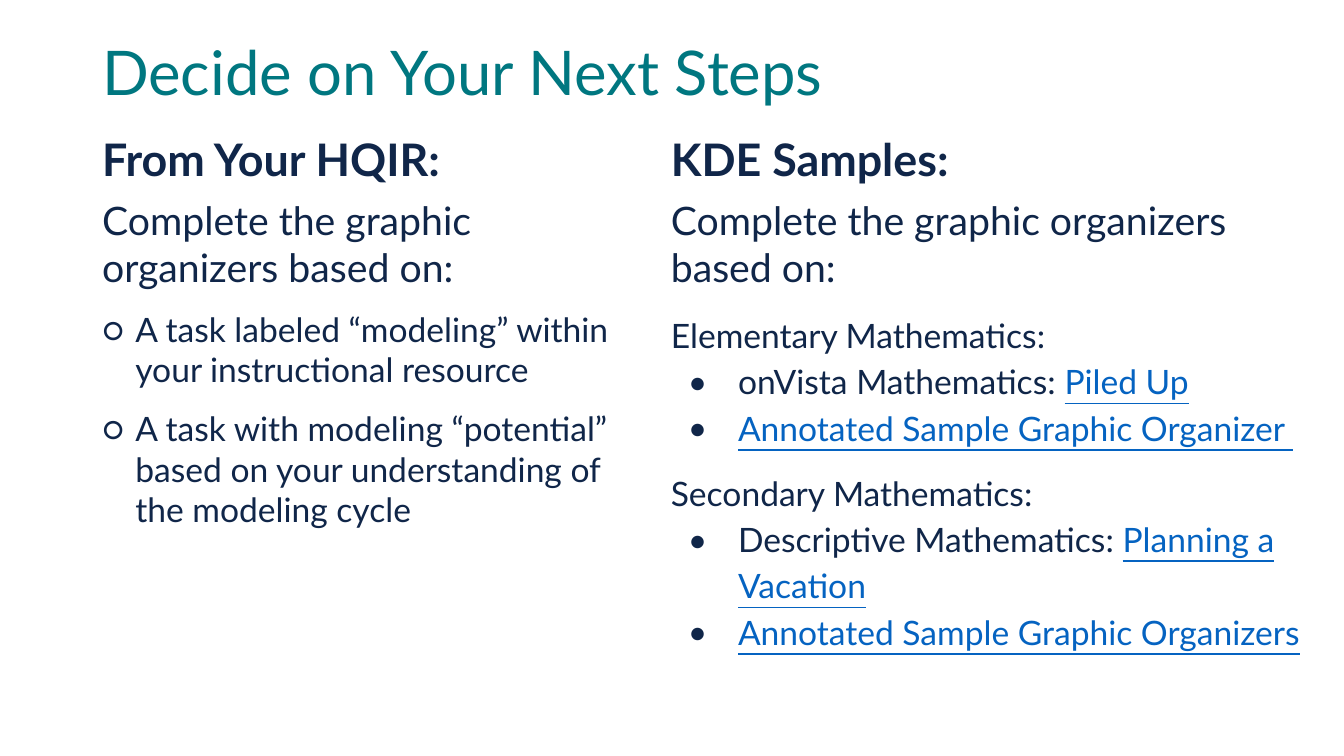
from dataclasses import dataclass

from lxml import etree
from pptx import Presentation
from pptx import util as u
from pptx.dml.color import RGBColor
from pptx.enum import text
from pptx.oxml import ns


@dataclass(frozen=True)
class Theme:
    """Colours, font and type sizes of the deck."""
    font: str = "Lato"
    teal: str = "007780"
    navy: str = "102649"
    link: str = "0563C1"
    white: str = "FFFFFF"
    title: float = 33
    heading: float = 24
    lead: float = 21
    detail: float = 18


THEME = Theme()


def add_span(para, words, size=THEME.detail, color=THEME.navy, bold=False, underline=False):
    """Add one formatted run to a paragraph."""
    span = para.add_run()
    span.text = words
    span.font.name = THEME.font
    span.font.size = u.Pt(size)
    span.font.bold = bold
    span.font.underline = underline
    span.font.color.rgb = RGBColor.from_string(color)


def add_bullet(para, mark, left, hang):
    """Give a paragraph a hanging bullet."""
    properties = para._p.get_or_add_pPr()
    properties.set("marL", str(u.Cm(left)))
    properties.set("indent", str(-u.Cm(hang)))
    color = etree.SubElement(properties, ns.qn("a:buClr"))
    etree.SubElement(color, ns.qn("a:srgbClr"), val=THEME.navy)
    etree.SubElement(properties, ns.qn("a:buFont"), typeface=THEME.font)
    etree.SubElement(properties, ns.qn("a:buChar"), char=mark)


class Page:
    """Hold the theme and the current slide."""

    def __init__(self, deck, theme):
        """Start a title-only slide."""
        self.theme = theme
        self.slide = deck.slides.add_slide(deck.slide_layouts[5])

    def frame(self, box, anchor):
        """Set the margins, wrapping and anchor of a box."""
        frame = box.text_frame
        frame.word_wrap = True
        frame.auto_size = text.MSO_AUTO_SIZE.NONE
        frame.vertical_anchor = anchor
        frame.margin_left = frame.margin_right = u.Cm(0.18)
        frame.margin_top = frame.margin_bottom = u.Cm(0.1)
        return frame

    def title(self, words, left, top, width, height):
        """Place and format the title."""
        box = self.slide.shapes.title
        box.left, box.top, box.width, box.height = map(u.Cm, (left, top, width, height))
        para = self.frame(box, text.MSO_ANCHOR.MIDDLE).paragraphs[0]
        para.alignment = text.PP_ALIGN.LEFT
        para.line_spacing = 0.9
        add_span(para, words, size=self.theme.title, color=self.theme.teal)

    def heading(self, words, left, top, width, height):
        """Add a bold column heading."""
        box = self.slide.shapes.add_textbox(*map(u.Cm, (left, top, width, height)))
        para = self.frame(box, text.MSO_ANCHOR.BOTTOM).paragraphs[0]
        para.line_spacing = 0.9
        add_span(para, words, size=self.theme.heading, bold=True)

    def body(self, lead, left, top, width, height):
        """Add a white column that opens with a lead paragraph."""
        box = self.slide.shapes.add_textbox(*map(u.Cm, (left, top, width, height)))
        box.fill.solid()
        box.fill.fore_color.rgb = RGBColor.from_string(self.theme.white)
        frame = self.frame(box, text.MSO_ANCHOR.TOP)
        add_span(frame.paragraphs[0], lead, size=self.theme.lead)
        return frame

    def item(self, frame, words="", link="", before=0, spacing=1.0, bullet=None):
        """Add a detail paragraph, with a bullet and link if given."""
        para = frame.add_paragraph()
        if bullet:
            add_bullet(para, *bullet)
        para.line_spacing = spacing
        para.space_before = u.Pt(before)
        if words:
            add_span(para, words)
        if link:
            add_span(para, link, color=self.theme.link, underline=True)


def main():
    """Build and save the slide."""
    deck = Presentation()
    deck.slide_width, deck.slide_height = u.Cm(25.4), u.Cm(14.29)
    page = Page(deck, THEME)
    left, right = 1.75, 12.5
    heading_top, body_top, band = 1.88, 3.61, 1.73
    lead = "Complete the graphic organizers based on:"

    page.title("Decide on Your Next Steps", left, 0.56, 21.9, band)

    page.heading("From Your HQIR:", left, heading_top, 10.74, band)
    resource = page.body(lead, left, body_top, 10, 8.66)
    for task in (
        "A task labeled “modeling” within your instructional resource",
        "A task with modeling “potential” based on your understanding of the modeling cycle",
    ):
        page.item(resource, task, before=10, bullet=("○", 0.63, 0.63))

    page.heading("KDE Samples:", right, heading_top, 11.15, band)
    samples = page.body(lead, right, body_top, 12.9, 9.12)
    levels = {
        "Elementary Mathematics:": [
            ("onVista Mathematics: ", "Piled Up"),
            ("", "Annotated Sample Graphic Organizer "),
        ],
        "Secondary Mathematics:": [
            ("Descriptive Mathematics: ", "Planning a Vacation"),
            ("", "Annotated Sample Graphic Organizers"),
        ],
    }
    for level, entries in levels.items():
        page.item(samples, level, before=10, spacing=1.15)
        for source, link in entries:
            page.item(samples, source, link, spacing=1.15, bullet=("•", 1.27, 0.95))

    deck.save("out.pptx")


if __name__ == "__main__":
    main()
